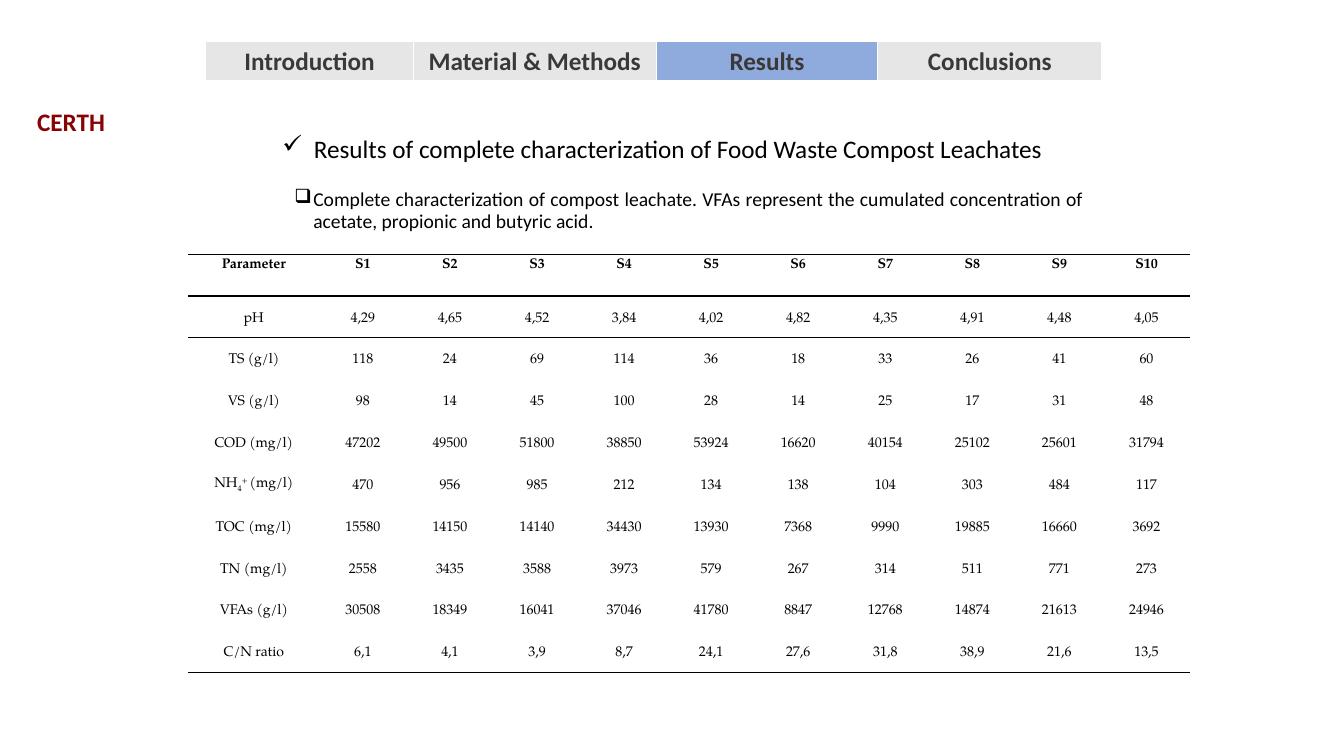
import pptx
import pptx.dml.color
import pptx.enum.text
import pptx.oxml.ns
import pptx.util
from lxml import etree

Pt = pptx.util.Pt
ALIGN = pptx.enum.text.PP_ALIGN
ANCHOR = pptx.enum.text.MSO_ANCHOR
PLAIN_TABLE_STYLE = "{2D5ABB26-0587-4C30-8999-92F81FD0307C}"

COLORS = {
    "text": "000000",
    "partner": "880103",
    "tab text": "3B3838",
    "tab": "E7E6E6",
    "current tab": "8FAADC",
    "tab border": "FFFFFF",
    "rule": "000000",
}
FORMATS = {
    "partner": {"name": "Calibri", "size": Pt(18), "bold": True, "color": "partner"},
    "tab": {"name": "Calibri", "size": Pt(18), "bold": True, "color": "tab text"},
    "title": {"name": "Calibri", "size": Pt(18), "bold": False, "color": "text"},
    "caption": {"name": "Calibri", "size": Pt(14), "bold": False, "color": "text"},
    "header": {"name": "TeX Gyre Pagella", "size": Pt(10), "bold": True, "color": "text"},
    "value": {"name": "TeX Gyre Pagella", "size": Pt(10), "bold": False, "color": "text"},
}

SECTIONS = ["Introduction", "Material & Methods", "Results", "Conclusions"]
CURRENT_SECTION = "Results"
SECTION_WIDTHS = [148.2, 173.5, 158.4, 160]

AMMONIUM = [("NH", 0), ("4", -25000), ("+ ", 30000), ("(mg/l)", 0)]
MEASUREMENTS = [
    ("pH", "4,29 4,65 4,52 3,84 4,02 4,82 4,35 4,91 4,48 4,05"),
    ("TS (g/l)", "118 24 69 114 36 18 33 26 41 60"),
    ("VS (g/l)", "98 14 45 100 28 14 25 17 31 48"),
    ("COD (mg/l)", "47202 49500 51800 38850 53924 16620 40154 25102 25601 31794"),
    (AMMONIUM, "470 956 985 212 134 138 104 303 484 117"),
    ("TOC (mg/l)", "15580 14150 14140 34430 13930 7368 9990 19885 16660 3692"),
    ("TN (mg/l)", "2558 3435 3588 3973 579 267 314 511 771 273"),
    ("VFAs (g/l)", "30508 18349 16041 37046 41780 8847 12768 14874 21613 24946"),
    ("C/N ratio", "6,1 4,1 3,9 8,7 24,1 27,6 31,8 38,9 21,6 13,5"),
]


def rgb(color):
    return pptx.dml.color.RGBColor.from_string(COLORS[color])


def add_element(parent, tag, **attributes):
    return etree.SubElement(parent, pptx.oxml.ns.qn(tag), attributes)


def write(paragraph, content, style, alignment):
    """Fill a paragraph with a string or with (text, baseline shift) parts."""
    paragraph.alignment = alignment
    parts = [(content, 0)] if isinstance(content, str) else content
    for text, baseline in parts:
        run = paragraph.add_run()
        run.text = text
        for name, value in FORMATS[style].items():
            if name == "color":
                run.font.color.rgb = rgb(value)
            else:
                setattr(run.font, name, value)
        if baseline:
            run._r.get_or_add_rPr().set("baseline", str(baseline))


def set_bullet(paragraph, character, indent, hanging):
    properties = paragraph._p.get_or_add_pPr()
    properties.set("marL", str(Pt(indent)))
    properties.set("indent", str(-Pt(hanging)))
    add_element(properties, "a:buChar", char=character)


def set_frame(shape, box, wrap):
    """Place a text shape and return its first paragraph."""
    shape.left, shape.top, shape.width, shape.height = map(Pt, box)
    frame = shape.text_frame
    frame.word_wrap = wrap
    frame.auto_size = pptx.enum.text.MSO_AUTO_SIZE.SHAPE_TO_FIT_TEXT
    frame.vertical_anchor = ANCHOR.TOP
    return frame.paragraphs[0]


def add_text_box(slide, box, wrap):
    return set_frame(slide.shapes.add_textbox(*map(Pt, box)), box, wrap)


def add_plain_table(slide, left, top, widths, row_count, row_height):
    shape = slide.shapes.add_table(
        row_count, len(widths), Pt(left), Pt(top), Pt(sum(widths)), Pt(row_height * row_count)
    )
    table = shape.table
    table._tbl.tblPr.find(pptx.oxml.ns.qn("a:tableStyleId")).text = PLAIN_TABLE_STYLE
    table.first_row = table.horz_banding = False
    for column, width in zip(table.columns, widths):
        column.width = Pt(width)
    for row in table.rows:
        row.height = Pt(row_height)
    return table


def set_borders(cell, color, widths):
    """Draw borders; widths maps the sides, in the order L, R, T, B, to points."""
    for side, width in widths.items():
        line = add_element(cell._tc.get_or_add_tcPr(), f"a:ln{side}", w=str(Pt(width)))
        fill = add_element(line, "a:solidFill")
        add_element(fill, "a:srgbClr", val=COLORS[color])


def add_section_tabs(slide):
    table = add_plain_table(slide, 147, 29.5, SECTION_WIDTHS, 1, 29.2)
    for cell, section in zip(table.rows[0].cells, SECTIONS):
        write(cell.text_frame.paragraphs[0], section, "tab", ALIGN.CENTER)
        set_borders(cell, "tab border", {"L": 1, "R": 1, "T": 1, "B": 3})
        cell.fill.solid()
        cell.fill.fore_color.rgb = rgb("current tab" if section == CURRENT_SECTION else "tab")


def add_measurement_table(slide):
    header = ["Parameter"] + [f"S{number}" for number in range(1, 11)]
    rows = [header] + [[name, *values.split()] for name, values in MEASUREMENTS]
    widths = [93.6] + [62.2] * 10
    table = add_plain_table(slide, 134.5, 181.5, widths, len(rows), 29.88)
    borders = {0: {"T": 1, "B": 1}, 1: {"T": 1}, len(rows) - 1: {"B": 1}}
    for index, contents in enumerate(rows):
        for cell, content in zip(table.rows[index].cells, contents):
            for side in ("left", "right", "top", "bottom"):
                setattr(cell, f"margin_{side}", 0)
            cell.vertical_anchor = ANCHOR.MIDDLE if index else ANCHOR.TOP
            paragraph = cell.text_frame.paragraphs[0]
            write(paragraph, content, "value" if index else "header", ALIGN.CENTER)
            paragraph.line_spacing = Pt(13)
            set_borders(cell, "rule", borders.get(index, {}))
            cell.fill.background()


def add_title(slide):
    paragraph = set_frame(slide.shapes.title, (189.4, 91.4, 567.4, 29), False)
    set_bullet(paragraph, "✓", 22.5, 22.5)
    title = "Results of complete characterization of Food Waste Compost Leachates"
    write(paragraph, title, "title", ALIGN.CENTER)


def add_caption(slide):
    paragraph = add_text_box(slide, (72.7, 131, 708.5, 39.6), True)
    set_bullet(paragraph, "❑", 144, 13.5)
    caption = (
        "Complete characterization of compost leachate. VFAs represent the cumulated "
        "concentration of acetate, propionic and butyric acid."
    )
    write(paragraph, caption, "caption", ALIGN.JUSTIFY)
    paragraph.line_spacing = 0.95
    paragraph.space_after = Pt(6)


def main():
    presentation = pptx.Presentation()
    presentation.slide_width, presentation.slide_height = Pt(960), Pt(540)
    slide = presentation.slides.add_slide(presentation.slide_layouts.get_by_name("Title Only"))
    partner = add_text_box(slide, (19.4, 72.7, 63.4, 29), False)
    write(partner, "CERTH", "partner", ALIGN.LEFT)
    add_section_tabs(slide)
    add_title(slide)
    add_caption(slide)
    add_measurement_table(slide)
    presentation.save("out.pptx")


if __name__ == "__main__":
    main()
